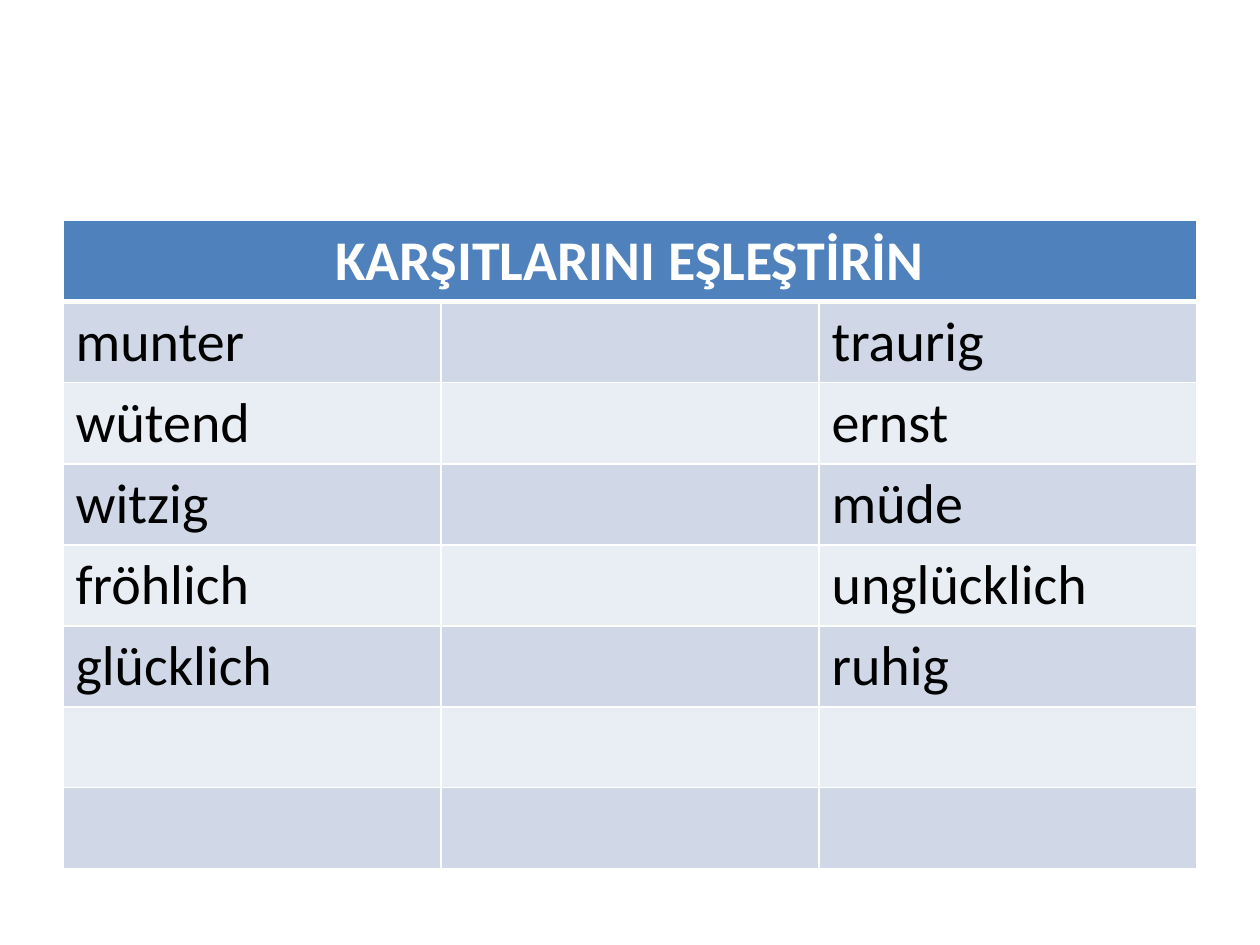
from lxml import etree
from pptx import Presentation, util as u
from pptx.dml.color import RGBColor
from pptx.enum import text
from pptx.oxml import ns

WHITE = RGBColor(0xFF, 0xFF, 0xFF)
BLACK = RGBColor(0x00, 0x00, 0x00)
BLUE = RGBColor(0x4F, 0x81, 0xBD)
BANDS = RGBColor(0xD0, 0xD8, 0xE8), RGBColor(0xE9, 0xED, 0xF4)

TITLE = "KARŞITLARINI EŞLEŞTİRİN"
PAIRS = [
    ("munter", "traurig"),
    ("wütend", "ernst"),
    ("witzig", "müde"),
    ("fröhlich", "unglücklich"),
    ("glücklich", "ruhig"),
    ("", ""),
    ("", ""),
]


def write(frame, words, font="Calibri", size=32, color=BLACK, bold=False, align=None):
    para = frame.paragraphs[0]
    para.alignment = align
    run = para.add_run()
    run.text = words
    run.font.name = font
    run.font.size = u.Pt(size)
    run.font.bold = bold
    run.font.color.rgb = color


class Deck:
    def __init__(self, line=WHITE, thin=1, thick=3):
        self.line, self.thin, self.thick = line, thin, thick
        self.show = Presentation()
        self.show.slide_width = u.Inches(10)
        self.show.slide_height = u.Inches(7.5)
        self.slide = self.show.slides.add_slide(self.show.slide_layouts[6])

    def border(self, cell, side, width):
        props = cell._tc.get_or_add_tcPr()
        edge = etree.SubElement(props, ns.qn(f"a:ln{side}"), w=str(u.Pt(width)))
        fill = etree.SubElement(edge, ns.qn("a:solidFill"))
        etree.SubElement(fill, ns.qn("a:srgbClr"), val=str(self.line))

    def cell(self, cell, fill, **widths):
        for side in "LRTB":
            self.border(cell, side, widths.get(side, self.thin))
        cell.fill.solid()
        cell.fill.fore_color.rgb = fill

    def table(self, title, pairs, left, top, width, row):
        count = len(pairs) + 1
        grid = self.slide.shapes.add_table(
            count, 3, u.Inches(left), u.Inches(top),
            u.Inches(width), u.Inches(row * count)).table
        for cell in grid.rows[0].cells:
            self.cell(cell, BLUE, B=self.thick)
        head = grid.cell(0, 0)
        head.merge(grid.cell(0, 2))
        write(head.text_frame, title, color=WHITE, bold=True,
              align=text.PP_ALIGN.CENTER)
        for num, (first, last) in enumerate(pairs, 1):
            for col, word in enumerate((first, "", last)):
                cell = grid.cell(num, col)
                self.cell(cell, BANDS[(num - 1) % 2],
                          T=self.thick if num == 1 else self.thin)
                if word:
                    write(cell.text_frame, word)


def main():
    deck = Deck()
    deck.table(TITLE, PAIRS, left=0.5, top=1.75, width=9, row=0.64)
    deck.show.save("out.pptx")


if __name__ == "__main__":
    main()
